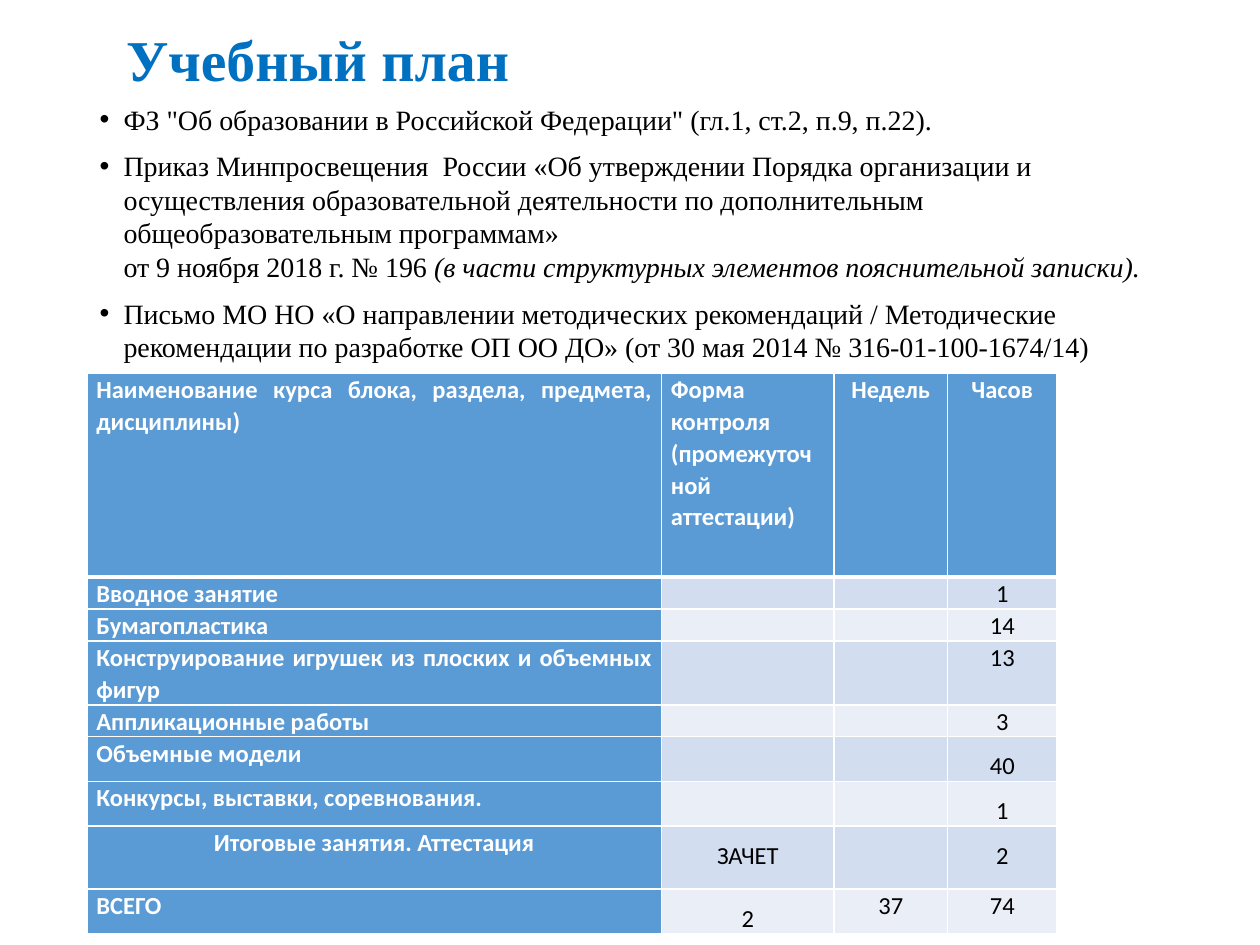
from dataclasses import dataclass

from lxml.etree import SubElement
from pptx import Presentation
from pptx.dml.color import RGBColor
from pptx.enum.text import MSO_ANCHOR, MSO_AUTO_SIZE, PP_ALIGN as AL
from pptx.oxml.ns import qn
from pptx.util import Inches, Pt


@dataclass(frozen=True)
class Theme:
    serif: str = "Times New Roman"
    sans: str = "Calibri"
    title: str = "0070C0"
    text: str = "000000"
    white: str = "FFFFFF"
    head: str = "5B9BD5"
    bands: tuple = ("D2DEEF", "EAEFF7")
    title_size: int = 33
    body_size: int = 16
    cell_size: int = 14


T = Theme()

BULLETS = [
    [('ФЗ "Об образовании в Российской Федерации" (гл.1, ст.2, п.9, п.22).', False)],
    [("Приказ Минпросвещения  России «Об утверждении Порядка организации и "
      "осуществления образовательной деятельности по дополнительным "
      "общеобразовательным программам»\nот 9 ноября 2018 г. № 196 ", False),
     ("(в части структурных элементов пояснительной записки).", True)],
    [("Письмо МО НО «О направлении методических рекомендаций / Методические "
      "рекомендации по разработке ОП ОО ДО» (от 30 мая 2014 № 316-01-100-1674/14)", False)],
]

COL_WIDTHS = [4.56, 1.37, 0.9, 0.87]
ROW_HEIGHTS = [1.62, 0.25, 0.25, 0.5, 0.25, 0.35, 0.35, 0.5, 0.35]
ROWS = [
    ["Наименование курса блока, раздела, предмета, дисциплины)",
     "Форма контроля (промежуточной аттестации)", "Недель", "Часов"],
    ["Вводное занятие", "", "", "1"],
    ["Бумагопластика", "", "", "14"],
    ["Конструирование игрушек из плоских и объемных фигур", "", "", "13"],
    ["Аппликационные работы", "", "", "3"],
    ["Объемные модели", "", "", "40"],
    ["Конкурсы, выставки, соревнования.", "", "", "1"],
    ["Итоговые занятия. Аттестация", "ЗАЧЕТ", "", "2"],
    ["ВСЕГО", "2", "37", "74"],
]
ALIGNS = {(0, 1): AL.JUSTIFY, (6, 0): AL.LEFT, (7, 0): AL.CENTER}
LOOSE_CELLS = {(5, 3), (6, 3), (7, 1), (7, 3), (8, 1)}


def add_text(p, text, size, font, color, bold=False, italic=False,
             align=AL.LEFT, spacing=1.0, before=0):
    p.alignment, p.line_spacing = align, spacing
    p.space_before, p.space_after = Pt(before), Pt(0)
    for i, line in enumerate(text.split("\n")):
        if i:
            p.add_line_break()
        r = p.add_run()
        r.text = line
        f = r.font
        f.size, f.name, f.bold, f.italic = Pt(size), font, bold, italic
        f.color.rgb = RGBColor.from_string(color)


def place(sp, left, top, width, height, anchor):
    sp.left, sp.top = Inches(left), Inches(top)
    sp.width, sp.height = Inches(width), Inches(height)
    tf = sp.text_frame
    tf.word_wrap, tf.auto_size, tf.vertical_anchor = True, MSO_AUTO_SIZE.NONE, anchor
    return tf


def set_bullet(p, indent):
    pPr = p._p.get_or_add_pPr()
    pPr.set("marL", str(indent))
    pPr.set("indent", str(-indent))
    SubElement(pPr, qn("a:buFont"), typeface="Arial")
    SubElement(pPr, qn("a:buChar"), char="•")


def set_borders(cell, widths):
    tcPr = cell._tc.get_or_add_tcPr()
    for side, width in widths.items():
        ln = SubElement(tcPr, qn(f"a:ln{side}"), w=str(Pt(width)))
        fill = SubElement(ln, qn("a:solidFill"))
        SubElement(fill, qn("a:srgbClr"), val=T.white)


def fill_title(sp):
    tf = place(sp, 0.9, 0, 8.41, 0.99, MSO_ANCHOR.MIDDLE)
    add_text(tf.paragraphs[0], "Учебный план", T.title_size, T.serif, T.title,
             bold=True, spacing=0.9)


def fill_bullets(sp):
    tf = place(sp, 0.69, 0.76, 8.62, 2.2, MSO_ANCHOR.TOP)
    for i, parts in enumerate(BULLETS):
        p = tf.add_paragraph() if i else tf.paragraphs[0]
        for text, italic in parts:
            add_text(p, text, T.body_size, T.serif, T.text, italic=italic, before=7.5)
        set_bullet(p, Inches(0.19))


def fill_cell(cell, row, col, text):
    heading = row == 0 or col == 0
    cell.margin_left = cell.margin_right = Inches(0.075)
    cell.margin_top = cell.margin_bottom = 0
    set_borders(cell, {"L": 1, "R": 1, "T": 3 if row == 1 else 1, "B": 1 if row else 3})
    cell.fill.solid()
    color = T.head if heading else T.bands[(row - 1) % 2]
    cell.fill.fore_color.rgb = RGBColor.from_string(color)
    p = cell.text_frame.paragraphs[0]
    if text:
        align = ALIGNS.get((row, col), AL.CENTER if col else AL.JUSTIFY)
        add_text(p, text, T.cell_size, T.sans, T.white if heading else T.text,
                 bold=heading, align=align,
                 spacing=1.5 if (row, col) in LOOSE_CELLS else 1.07)
    else:
        SubElement(p._p, qn("a:endParaRPr"), sz=str(T.cell_size * 100))


def add_plan_table(s):
    frame = s.shapes.add_table(len(ROWS), len(COL_WIDTHS), Inches(0.69), Inches(2.96),
                               Inches(sum(COL_WIDTHS)), Inches(sum(ROW_HEIGHTS)))
    table = frame.table
    table.first_col = True
    for column, width in zip(table.columns, COL_WIDTHS):
        column.width = Inches(width)
    for i, (height, texts) in enumerate(zip(ROW_HEIGHTS, ROWS)):
        table.rows[i].height = Inches(height)
        for j, text in enumerate(texts):
            fill_cell(table.cell(i, j), i, j, text)


def main():
    prs = Presentation()
    prs.slide_width, prs.slide_height = Inches(10), Inches(7.5)
    s = prs.slides.add_slide(prs.slide_layouts[1])
    fill_title(s.shapes.title)
    fill_bullets(s.placeholders[1])
    add_plan_table(s)
    prs.save("out.pptx")


if __name__ == "__main__":
    main()
